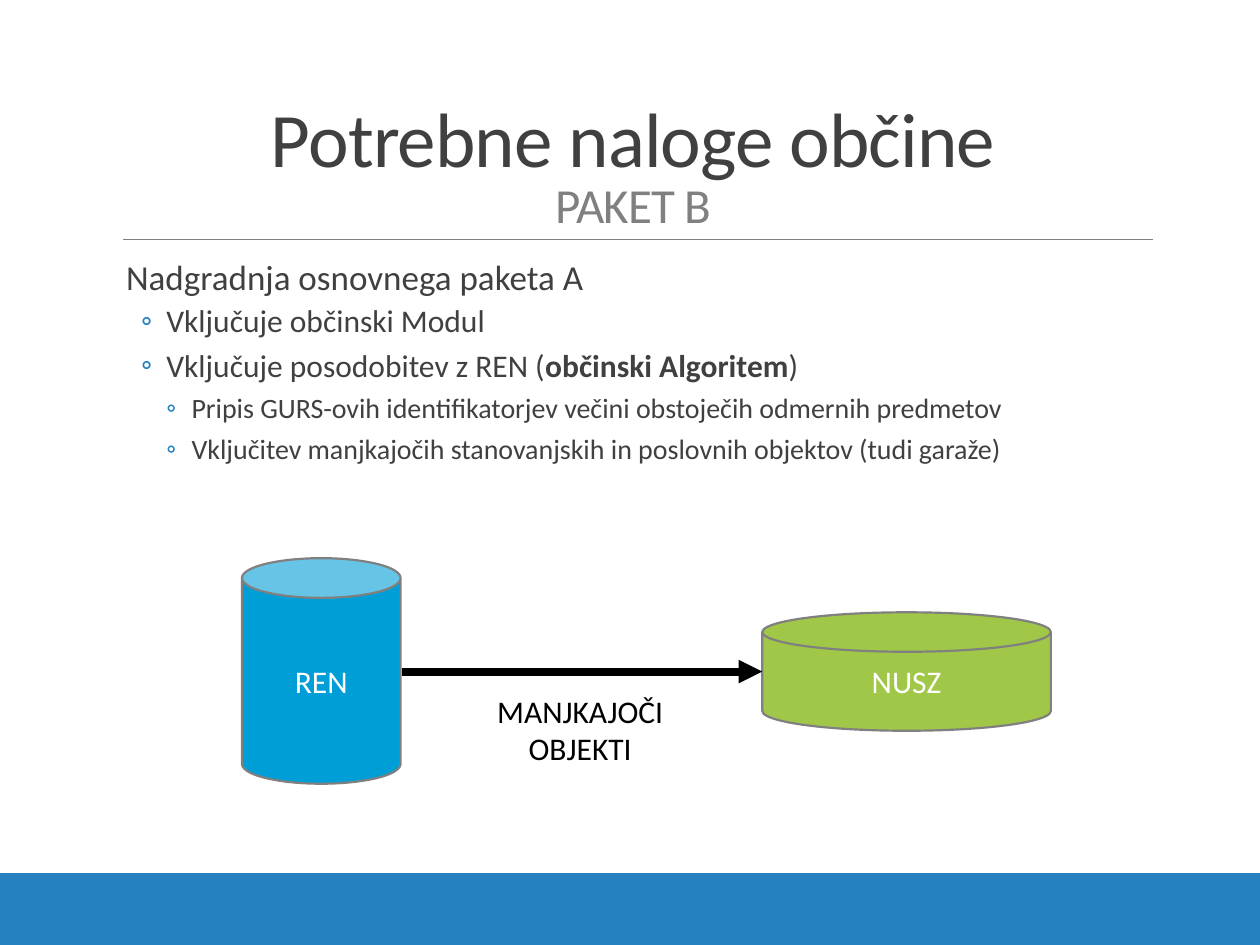
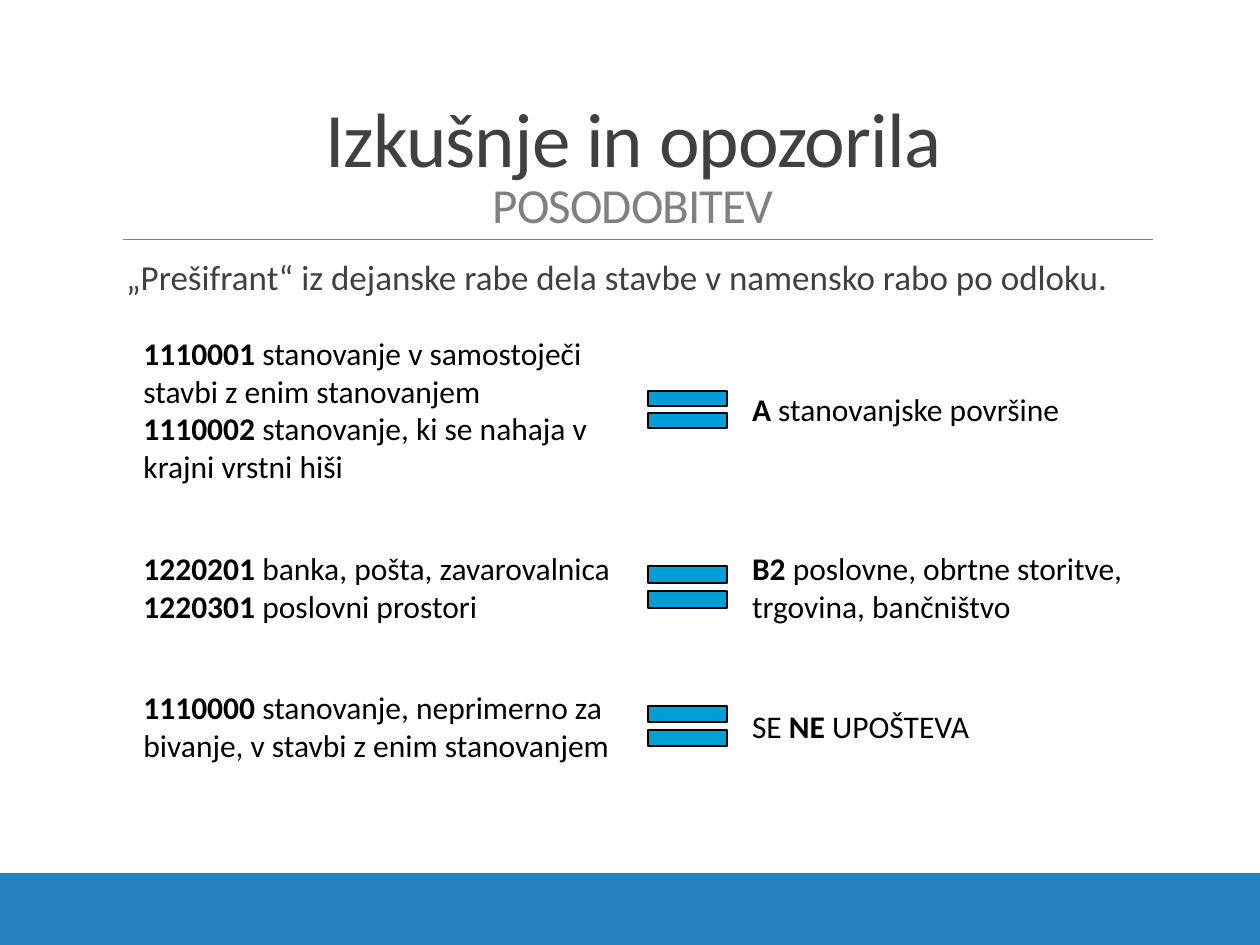
from dataclasses import dataclass

from lxml.etree import SubElement
from pptx import Presentation
from pptx.dml.color import RGBColor
from pptx.enum.shapes import MSO_CONNECTOR, MSO_SHAPE
from pptx.enum.text import MSO_ANCHOR, MSO_AUTO_SIZE, PP_ALIGN
from pptx.oxml.ns import qn
from pptx.util import Inches, Pt

FONT = "Calibri"
COLORS = {
    "band": "2581C0",
    "rule": "808080",
    "title": "404040",
    "subtitle": "808080",
    "cyan": "009ED6",
    "green": "A0C748",
    "black": "000000",
    "white": "FFFFFF",
}
LEFT, WIDTH = 0.9, 8.25


@dataclass(frozen=True)
class Level:
    size: int
    margin: float
    hanging: float
    before: int
    after: int
    bullet: str = ""


@dataclass(frozen=True)
class Database:
    label: str
    shape: MSO_SHAPE
    box: tuple[float, float, float, float]
    color: str


@dataclass(frozen=True)
class Mapping:
    """One row that sets building-use codes equal to a decree category."""
    middle: float
    codes: tuple[str, ...]
    codes_lines: int
    sign_height: float
    category: str
    category_lines: int


LEVELS = (
    Level(20, 0.1, 0, 12, 2),
    Level(18, 0.42, 0.2, 2, 4, "◦"),
    Level(16, 0.62, 0.2, 2, 4, "◦"),
)

TASKS = (
    (0, "Nadgradnja osnovnega paketa A"),
    (1, "Vključuje občinski Modul"),
    (1, "Vključuje posodobitev z REN (**občinski Algoritem**)"),
    (2, "Pripis GURS-ovih identifikatorjev večini obstoječih odmernih predmetov"),
    (2, "Vključitev manjkajočih stanovanjskih in poslovnih objektov (tudi garaže)"),
)

DATABASES = (
    Database("REN", MSO_SHAPE.CAN, (1.92, 4.43, 1.26, 1.79), "cyan"),
    Database("NUSZ", MSO_SHAPE.FLOWCHART_MAGNETIC_DISK, (6.05, 4.86, 2.29, 0.94), "green"),
)

MAPPINGS = (
    Mapping(3.25, ("**1110001** stanovanje v samostoječi stavbi z enim stanovanjem",
                   "**1110002** stanovanje, ki se nahaja v krajni vrstni hiši"), 4,
            0.5, "**A** stanovanjske površine", 1),
    Mapping(4.66, ("**1220201** banka, pošta, zavarovalnica",
                   "**1220301** poslovni prostori"), 2,
            0.56, "**B2 **poslovne, obrtne storitve, trgovina, bančništvo", 2),
    Mapping(5.76, ("**1110000** stanovanje, neprimerno za bivanje, v stavbi z enim stanovanjem",), 2,
            0.54, "SE **NE** UPOŠTEVA", 1),
)


def rgb(name: str) -> RGBColor:
    return RGBColor.from_string(COLORS[name])


def add_text(p, text: str, *, size: float = 18, color: str = "black", spacing: int = 0) -> None:
    """Add runs to a paragraph; **marks** enclose bold text."""
    for i, part in enumerate(text.split("**")):
        if not part:
            continue
        r = p.add_run()
        r.text = part
        r.font.name = FONT
        r.font.size = Pt(size)
        r.font.bold = i % 2 == 1
        r.font.color.rgb = rgb(color)
        if spacing:
            r._r.get_or_add_rPr().set("spc", str(spacing))


def add_box(s, left: float, top: float, width: float, height: float):
    tf = s.shapes.add_textbox(Inches(left), Inches(top), Inches(width), Inches(height)).text_frame
    tf.word_wrap = True
    return tf


def add_label(s, left: float, top: float, width: float, height: float,
              lines: tuple[str, ...], align: PP_ALIGN = PP_ALIGN.LEFT) -> None:
    tf = add_box(s, left, top, width, height)
    tf.auto_size = MSO_AUTO_SIZE.SHAPE_TO_FIT_TEXT
    for i, line in enumerate(lines):
        p = tf.add_paragraph() if i else tf.paragraphs[0]
        p.alignment = align
        add_text(p, line)


def add_shape(s, kind: MSO_SHAPE, left: float, top: float, width: float, height: float,
              fill: str, line: str | None = None):
    sp = s.shapes.add_shape(kind, Inches(left), Inches(top), Inches(width), Inches(height))
    sp.shadow.inherit = False
    sp.fill.solid()
    sp.fill.fore_color.rgb = rgb(fill)
    if line:
        sp.line.color.rgb = rgb(line)
        sp.line.width = Pt(1.25)
    else:
        sp.line.fill.background()
    return sp


def add_line(s, x1: float, x2: float, y: float, color: str, weight: float, arrow: bool = False) -> None:
    """Draw a horizontal line, with an arrowhead at x2 on request."""
    c = s.shapes.add_connector(MSO_CONNECTOR.STRAIGHT, Inches(x1), Inches(y), Inches(x2), Inches(y))
    c.line.color.rgb = rgb(color)
    c.line.width = Pt(weight)
    if arrow:
        SubElement(c.line._get_or_add_ln(), qn("a:tailEnd"), type="triangle")
    SubElement(c._element.spPr, qn("a:effectLst"))


def add_base_slide(prs, title: str, subtitle: str):
    """Add a slide with the shared band, rule and title."""
    s = prs.slides.add_slide(prs.slide_layouts[6])
    for top, height in ((7, 0.5), (6.93, 0.07)):
        add_shape(s, MSO_SHAPE.RECTANGLE, 0, top, 10, height, "band")
    add_line(s, 0.98, 9.15, 1.9, "rule", 0.5)

    tf = add_box(s, LEFT, 0.31, WIDTH, 1.59)
    tf.vertical_anchor = MSO_ANCHOR.BOTTOM
    p = tf.paragraphs[0]
    p.alignment = PP_ALIGN.CENTER
    p.line_spacing = 0.85
    add_text(p, title, size=44, color="title", spacing=-50)
    p.add_line_break()
    add_text(p, subtitle, size=28, color="subtitle", spacing=-50)
    return s


def add_body(s, items: tuple[tuple[int, str], ...]) -> None:
    tf = add_box(s, LEFT, 2.02, WIDTH, 4.4)
    tf.margin_left = tf.margin_right = 0
    for i, (depth, text) in enumerate(items):
        level = LEVELS[depth]
        p = tf.add_paragraph() if i else tf.paragraphs[0]
        pPr = p._p.get_or_add_pPr()
        pPr.set("marL", str(Inches(level.margin)))
        pPr.set("indent", str(-Inches(level.hanging)))
        if level.bullet:
            SubElement(SubElement(pPr, qn("a:buClr")), qn("a:srgbClr"), val=COLORS["band"])
            SubElement(pPr, qn("a:buFont"), typeface=FONT)
            SubElement(pPr, qn("a:buChar"), char=level.bullet)
        p.level = depth
        p.line_spacing = 0.9
        if i:
            p.space_before = Pt(level.before)
        p.space_after = Pt(level.after)
        add_text(p, text, size=level.size, color="title")


def add_database(s, db: Database) -> None:
    sp = add_shape(s, db.shape, *db.box, db.color, "rule")
    tf = sp.text_frame
    tf.vertical_anchor = MSO_ANCHOR.MIDDLE
    p = tf.paragraphs[0]
    p.alignment = PP_ALIGN.CENTER
    add_text(p, db.label, color="white")


def add_mapping(s, m: Mapping) -> None:
    def centred(left: float, width: float, lines: int, texts: tuple[str, ...]) -> None:
        height = 0.1 + 0.3 * lines
        add_label(s, left, m.middle - height / 2, width, height, texts)

    centred(1.04, 3.99, m.codes_lines, m.codes)
    add_shape(s, MSO_SHAPE.MATH_EQUAL, 5.03, m.middle - m.sign_height / 2, 0.85, m.sign_height,
              "cyan", "black")
    centred(5.87, 3.28, m.category_lines, (m.category,))


def build_tasks(prs) -> None:
    s = add_base_slide(prs, "Potrebne naloge občine", "PAKET B")
    add_body(s, TASKS)
    for db in DATABASES:
        add_database(s, db)
    add_line(s, 3.19, 6.05, 5.33, "black", 4.5, arrow=True)
    add_label(s, 3.82, 5.44, 1.57, 0.71, ("MANJKAJOČI OBJEKTI",), PP_ALIGN.CENTER)


def build_warnings(prs) -> None:
    s = add_base_slide(prs, "Izkušnje in opozorila", "POSODOBITEV")
    add_body(s, ((0, "„Prešifrant“ iz dejanske rabe dela stavbe v namensko rabo po odloku."),))
    for m in MAPPINGS:
        add_mapping(s, m)


def main() -> None:
    prs = Presentation()
    prs.slide_width, prs.slide_height = Inches(10), Inches(7.5)
    build_tasks(prs)
    build_warnings(prs)
    prs.save("out.pptx")


if __name__ == "__main__":
    main()
